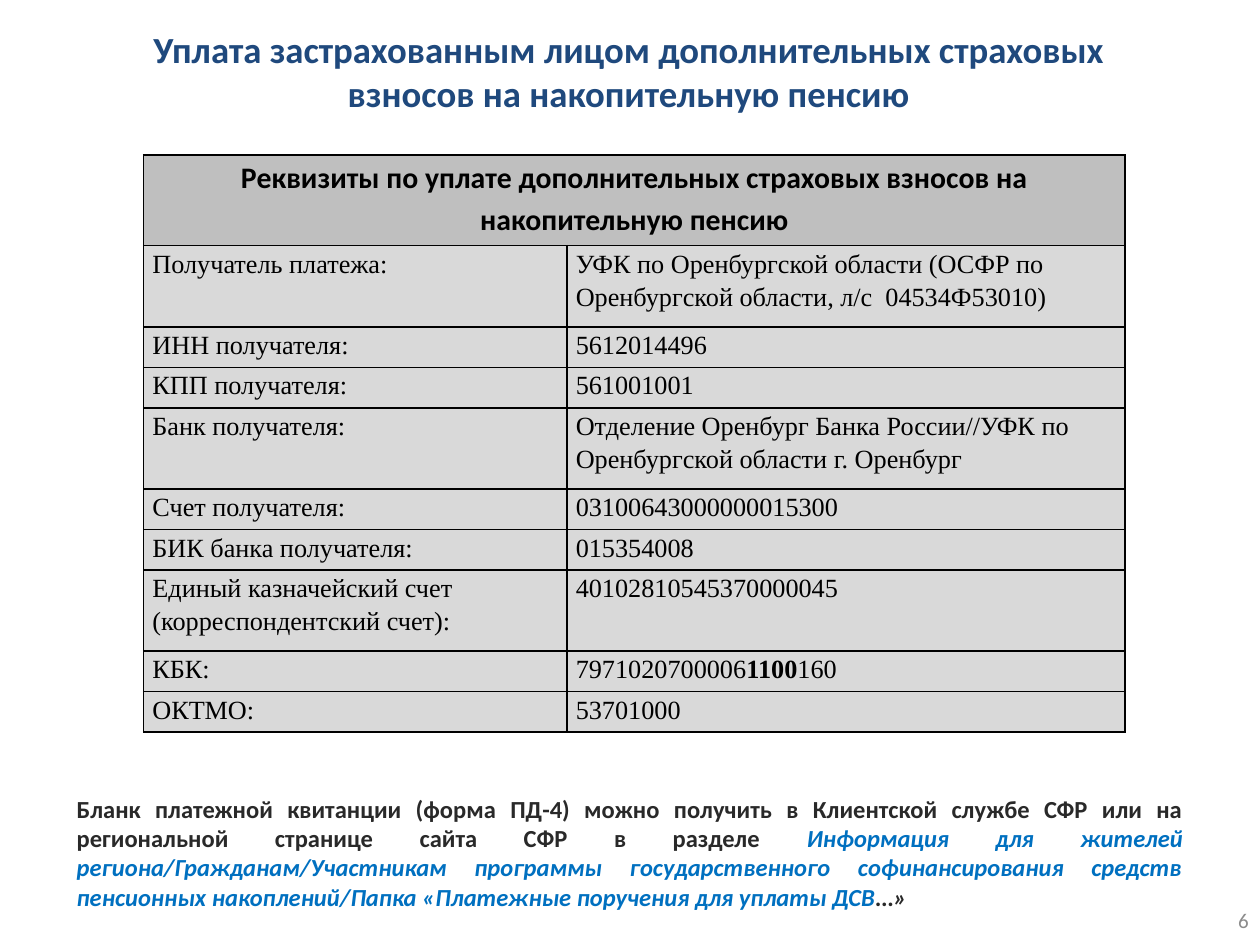
from lxml import etree
from pptx import Presentation
from pptx.dml.color import RGBColor
from pptx.enum.text import MSO_ANCHOR, PP_ALIGN
from pptx.oxml.ns import qn
from pptx.util import Inches, Pt

LEFT, MID = PP_ALIGN.LEFT, PP_ALIGN.CENTER
RIGHT, FULL = PP_ALIGN.RIGHT, PP_ALIGN.JUSTIFY
TOP, CENTRE = MSO_ANCHOR.TOP, MSO_ANCHOR.MIDDLE

NAVY = RGBColor(0x1F, 0x49, 0x7D)
BLUE = RGBColor(0x00, 0x70, 0xC0)
DARK = RGBColor(0x29, 0x29, 0x29)
GREY = RGBColor(0x8C, 0x8C, 0x8C)
BLACK = RGBColor(0x00, 0x00, 0x00)
HEAD = RGBColor(0xBF, 0xBF, 0xBF)
BODY = RGBColor(0xD9, 0xD9, 0xD9)

SANS, SERIF = "Calibri", "Times New Roman"
COLS, ROWS = 100, 75  # slide grid

TITLE = ("Уплата застрахованным лицом дополнительных страховых "
         "взносов на накопительную пенсию")
CAPTION = "Реквизиты по уплате дополнительных страховых взносов на накопительную пенсию"
# Label, value parts (every second part is bold), lines of text
DETAILS = [
    ("Получатель платежа:",
     ["УФК по Оренбургской области (ОСФР по Оренбургской области, л/с  04534Ф53010)"], 2),
    ("ИНН получателя:", ["5612014496"], 1),
    ("КПП получателя:", ["561001001"], 1),
    ("Банк получателя:",
     ["Отделение Оренбург Банка России//УФК по Оренбургской области г. Оренбург"], 2),
    ("Счет получателя:", ["03100643000000015300"], 1),
    ("БИК банка получателя:", ["015354008"], 1),
    ("Единый казначейский счет (корреспондентский счет):", ["40102810545370000045"], 2),
    ("КБК:", ["7971020700006", "1100", "160"], 1),
    ("ОКТМО:", ["53701000"], 1),
]
NOTE = [
    ("Бланк платежной квитанции (форма ПД-4) можно получить в Клиентской службе СФР "
     "или на региональной странице сайта CФР в разделе ", DARK, False),
    ("Информация для жителей региона/Гражданам/Участникам программы государственного "
     "софинансирования средств пенсионных накоплений/Папка «Платежные поручения для "
     "уплаты ДСВ", BLUE, True),
    ("…»", DARK, True),
]


class Page:
    def __init__(self):
        self.deck = Presentation()
        self.deck.slide_width, self.deck.slide_height = Inches(10), Inches(7.5)
        self.slide = self.deck.slides.add_slide(self.deck.slide_layouts[6])

    def x(self, cols):
        return round(self.deck.slide_width * cols / COLS)

    def y(self, rows):
        return round(self.deck.slide_height * rows / ROWS)

    def run(self, para, text, size, font, color, bold=False, slant=False):
        run = para.add_run()
        run.text = text
        face = run.font
        face.size, face.name, face.bold, face.italic = Pt(size), font, bold, slant
        face.color.rgb = color

    def text(self, box, runs, size, align, anchor=TOP, bold=True):
        left, top, wide, high = box
        shape = self.slide.shapes.add_textbox(
            self.x(left), self.y(top), self.x(wide), self.y(high))
        frame = shape.text_frame
        frame.word_wrap, frame.vertical_anchor = True, anchor
        para = frame.paragraphs[0]
        para.alignment = align
        for words, color, slant in runs:
            self.run(para, words, size, SANS, color, bold, slant)

    def border(self, cell):
        props = cell._tc.get_or_add_tcPr()
        for spot, side in enumerate(("a:lnL", "a:lnR", "a:lnT", "a:lnB")):
            line = etree.Element(qn(side), w=str(Pt(1)))
            fill = etree.SubElement(line, qn("a:solidFill"))
            etree.SubElement(fill, qn("a:srgbClr"), val=str(BLACK))
            props.insert(spot, line)

    def cell(self, cell, parts, fill, size, font, align=LEFT, bold=False):
        cell.fill.solid()
        cell.fill.fore_color.rgb = fill
        cell.margin_left = cell.margin_right = self.x(0.7)
        cell.margin_top = cell.margin_bottom = 0
        para = cell.text_frame.paragraphs[0]
        para.alignment, para.line_spacing = align, 1.15
        for spot, words in enumerate(parts):
            self.run(para, words, size, font, BLACK, bold or spot % 2 == 1)

    def table(self, left, top, widths, head, line):
        highs = [head] + [line * count for _, _, count in DETAILS]
        grid = self.slide.shapes.add_table(
            len(highs), len(widths), self.x(left), self.y(top),
            self.x(sum(widths)), self.y(sum(highs))).table
        for col, wide in zip(grid.columns, widths):
            col.width = self.x(wide)
        for row, high in zip(grid.rows, highs):
            row.height = self.y(high)

        # Heading across both columns
        grid.cell(0, 0).merge(grid.cell(0, 1))
        self.cell(grid.cell(0, 0), [CAPTION], HEAD, 17, SANS, MID, True)

        # Payment details
        for row, (label, value, _) in enumerate(DETAILS, 1):
            for col, parts in enumerate(([label], value)):
                self.cell(grid.cell(row, col), parts, BODY, 15, SERIF)
        for cell in grid.iter_cells():
            self.border(cell)


def main():
    page = Page()
    page.text((10.9, 1.6, 78, 8), [(TITLE, NAVY, False)], 21, MID, CENTRE)
    page.table(11.4, 12.3, (33.6, 44.3), 7.2, 3.22)
    page.text((5.1, 62.5, 89.8, 10.4), NOTE, 14, FULL)
    # Page number
    page.text((76.8, 71, 23.3, 4), [("6", GREY, False)], 12, RIGHT, CENTRE, False)
    page.deck.save("out.pptx")


if __name__ == "__main__":
    main()
